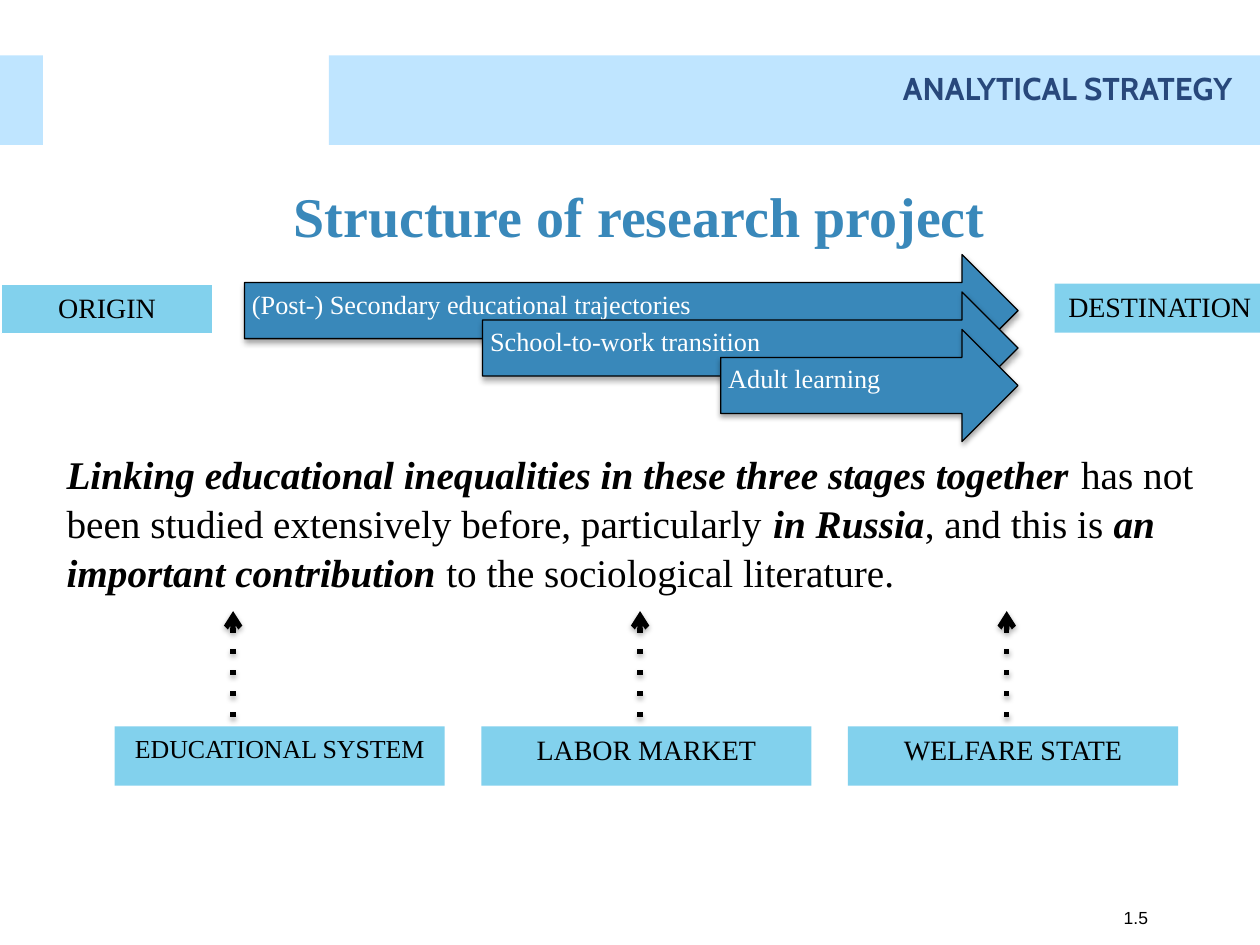
from dataclasses import dataclass

from lxml import etree
from pptx import Presentation
from pptx import util as u
from pptx.dml.color import RGBColor
from pptx.enum import shapes, text
from pptx.oxml.ns import qn


@dataclass(frozen=True)
class Theme:
    serif: str = "Times New Roman"
    header_font: str = "Cabin"
    number_font: str = "Arial"
    band: str = "0099FF"
    header: str = "28487B"
    accent: str = "3988BA"
    box: str = "75CCEC"
    ink: str = "000000"
    paper: str = "FFFFFF"
    title_size: float = 32
    statement_size: float = 22.4
    header_size: float = 18
    box_size: float = 16
    tight_size: float = 14.8
    stage_size: float = 15
    number_size: float = 10


THEME = Theme()
COLUMNS, ROWS = 100, 75
CELL = u.Inches(0.1)
LEFT, CENTER, RIGHT = text.PP_ALIGN.LEFT, text.PP_ALIGN.CENTER, text.PP_ALIGN.RIGHT
TOP, MIDDLE = text.MSO_ANCHOR.TOP, text.MSO_ANCHOR.MIDDLE


def cells(*counts):
    return [u.Emu(round(count * CELL)) for count in counts]


def write(holder, runs, size, color=THEME.ink, font=THEME.serif, align=LEFT,
          anchor=TOP, insets=(1, 0.5, 1, 0.5), spacing=None):
    frame = holder.text_frame
    frame.word_wrap = True
    frame.vertical_anchor = anchor
    (frame.margin_left, frame.margin_top,
     frame.margin_right, frame.margin_bottom) = cells(*insets)
    paragraph = frame.paragraphs[0]
    paragraph.alignment = align
    if spacing:
        paragraph.line_spacing = spacing
    for words, bold, italic in runs:
        run = paragraph.add_run()
        run.text = words
        run.font.name, run.font.size = font, u.Pt(size)
        run.font.bold, run.font.italic = bold, italic
        run.font.color.rgb = RGBColor.from_string(color)


def add_words(slide, area, runs, size, **style):
    write(slide.shapes.add_textbox(*cells(*area)), runs, size, **style)


def add_panel(slide, area, color, opacity, border=None):
    panel = slide.shapes.add_shape(shapes.MSO_SHAPE.RECTANGLE, *cells(*area))
    panel.shadow.inherit = False
    panel.fill.solid()
    panel.fill.fore_color.rgb = RGBColor.from_string(color)
    tint = panel.element.spPr.find(qn("a:solidFill"))[0]
    etree.SubElement(tint, qn("a:alpha"), val=str(opacity * 1000))
    if border:
        panel.line.color.rgb = RGBColor.from_string(border)
        panel.line.width = u.Pt(0.75)
    else:
        panel.line.fill.background()
    return panel


def add_label(slide, area, words, size=THEME.box_size, border=None):
    panel = add_panel(slide, area, THEME.box, 90, border)
    write(panel, [(words, False, False)], size, align=CENTER)


def cast_shadow(effects):
    shadow = etree.SubElement(
        effects, qn("a:outerShdw"), blurRad=str(u.Pt(3.1)), dist=str(u.Pt(1.8)),
        dir="5400000", rotWithShape="0")
    shade = etree.SubElement(shadow, qn("a:srgbClr"), val=THEME.ink)
    etree.SubElement(shade, qn("a:alpha"), val="35000")


def add_stage(slide, left, top, words):
    tip, height = 80.8, 8.9
    middle, quarter = top + height / 2, height / 4
    neck = tip - height / 2
    outline = [(left, middle - quarter), (neck, middle - quarter), (neck, top),
               (tip, middle), (neck, top + height), (neck, middle + quarter),
               (left, middle + quarter)]
    start, *rest = [cells(*point) for point in outline]
    builder = slide.shapes.build_freeform(*start)
    builder.add_line_segments(rest, close=True)
    stage = builder.convert_to_shape()
    stage.shadow.inherit = False
    stage.fill.solid()
    stage.fill.fore_color.rgb = RGBColor.from_string(THEME.accent)
    stage.line.color.rgb = RGBColor.from_string(THEME.ink)
    stage.line.width = u.Pt(0.75)
    cast_shadow(stage.element.spPr.find(qn("a:effectLst")))
    write(stage, [(words, False, False)], THEME.stage_size, color=THEME.paper,
          anchor=MIDDLE, insets=(0.6, 2.9, 5, 3.7), spacing=0.9)


def add_influence(slide, column):
    influence = slide.shapes.add_connector(
        shapes.MSO_CONNECTOR.STRAIGHT, *cells(column, 56.9, column, 48.5))
    influence.line.color.rgb = RGBColor.from_string(THEME.ink)
    influence.line.width = u.Pt(3)
    properties = influence.element.spPr
    stroke = properties.find(qn("a:ln"))
    etree.SubElement(stroke, qn("a:prstDash"), val="dot")
    etree.SubElement(stroke, qn("a:tailEnd"), type="arrow")
    cast_shadow(etree.SubElement(properties, qn("a:effectLst")))


def main():
    deck = Presentation()
    deck.slide_width, deck.slide_height = cells(COLUMNS, ROWS)
    slide = deck.slides.add_slide(deck.slide_layouts[6])

    for left, width in ((26.1, 73.9), (0, 3.4)):
        add_panel(slide, (left, 4.4, width, 7.1), THEME.band, 25)

    add_words(slide, (4.3, 13.1, 92.9, 7.9),
              [("Structure of research project", True, False)], THEME.title_size,
              color=THEME.accent, align=CENTER, anchor=MIDDLE)
    add_words(slide, (88.2, 71.5, 11.8, 3.5), [("1.5", False, False)],
              THEME.number_size, font=THEME.number_font)

    stages = ("(Post-) Secondary educational trajectories",
              "School-to-work transition", "Adult learning")
    for step, words in enumerate(stages):
        add_stage(slide, 19.4 + 18.9 * step, 20.2 + 2.97 * step, words)

    add_label(slide, (0.1, 22.6, 16.8, 3.9), "ORIGIN", border=THEME.paper)
    add_label(slide, (83.7, 22.5, 16.7, 3.9), "DESTINATION")

    contexts = (("EDUCATIONAL SYSTEM", THEME.tight_size, 18.5),
                ("LABOR MARKET", THEME.box_size, 50.8),
                ("WELFARE STATE", THEME.box_size, 79.9))
    for place, (words, size, influence_column) in enumerate(contexts):
        add_label(slide, (9.1 + 29.1 * place, 57.65, 26.2, 4.7), words, size)
        add_influence(slide, influence_column)

    statement = (
        ("Linking educational inequalities in these three stages together ", True),
        ("has not been studied extensively before, particularly ", False),
        ("in Russia", True), (", and this is ", False),
        ("an important contribution ", True),
        ("to the sociological literature.", False))
    add_words(slide, (4.3, 35.1, 92.9, 11.8),
              [(words, stressed, stressed) for words, stressed in statement],
              THEME.statement_size, spacing=1.04)
    add_words(slide, (26.5, 4.4, 73.9, 7.1), [("ANALYTICAL STRATEGY", True, False)],
              THEME.header_size, color=THEME.header, font=THEME.header_font,
              align=RIGHT, insets=(1, 0.5, 2.6, 0.1), spacing=1.2)

    deck.save("out.pptx")


if __name__ == "__main__":
    main()
